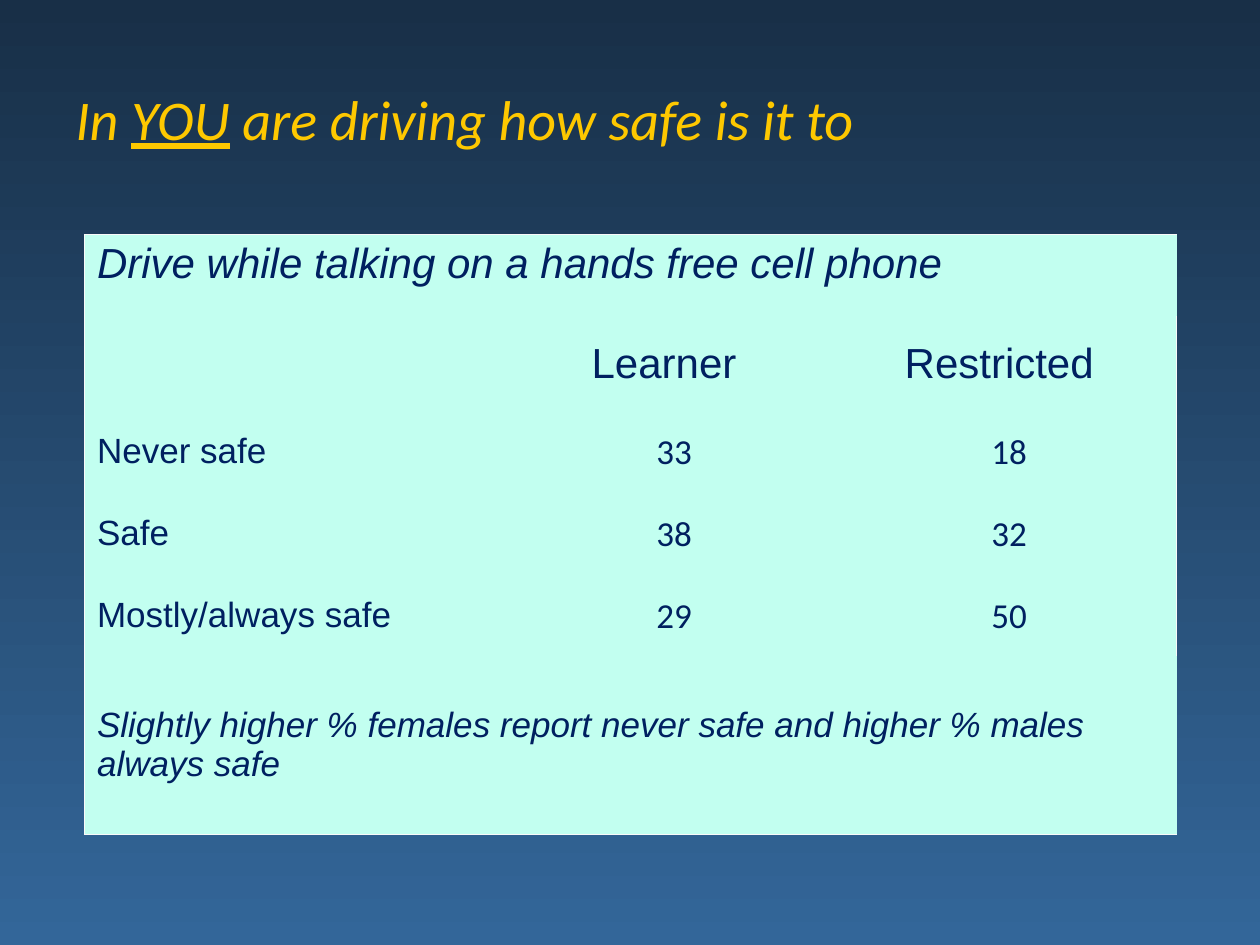
from lxml.etree import SubElement
from pptx import Presentation
from pptx.dml.color import RGBColor
from pptx.enum.text import MSO_ANCHOR, PP_ALIGN
from pptx.oxml.ns import qn
from pptx.util import Inches, Pt

COLOURS = {
    "sky top": "182F47",
    "sky bottom": "336699",
    "title": "FEC800",
    "text": "002060",
    "cell": "C2FFF0",
    "border": "F9F9F9",
}
PLAIN_TABLE_STYLE = "{2D5ABB26-0587-4C30-8999-92F81FD0307C}"
BORDER_TAGS = {"left": "a:lnL", "right": "a:lnR", "top": "a:lnT", "bottom": "a:lnB"}

TITLE = [("In ", False), ("YOU", True), (" are driving how safe is it to", False)]
QUESTION = "Drive while talking on a hands free cell phone"
GROUPS = ["Learner", "Restricted"]
ANSWERS = [
    ("Never safe", 33, 18),
    ("Safe", 38, 32),
    ("Mostly/always safe", 29, 50),
]
REMARK = "Slightly higher % females report never safe and higher % males always safe"


class SlideBuilder:
    def __init__(self, deck):
        self.deck = deck
        self.page = deck.slides.add_slide(deck.slide_layouts[5])

    def place(self, left, top, width, height):
        """Turn shares of the slide's size into lengths."""
        across, down = self.deck.slide_width, self.deck.slide_height
        return [int(share * size) for share, size in
                zip((left, top, width, height), (across, down, across, down))]

    def colour(self, name):
        return RGBColor.from_string(COLOURS[name])

    def style(self, span, size, font, colour, italic=False):
        span.font.size = Pt(size)
        span.font.name = font
        span.font.italic = italic
        span.font.color.rgb = self.colour(colour)

    def background(self, *names):
        fill = self.page.background.fill
        fill.gradient()
        fill.gradient_angle = 270
        for stop, name in zip(fill.gradient_stops, names):
            stop.color.rgb = self.colour(name)

    def title(self, parts, *shares):
        box = self.page.shapes.title
        box.left, box.top, box.width, box.height = self.place(*shares)
        box.text_frame.vertical_anchor = MSO_ANCHOR.MIDDLE
        para = box.text_frame.paragraphs[0]
        para.alignment = PP_ALIGN.LEFT
        for words, underlined in parts:
            span = para.add_run()
            span.text = words
            self.style(span, 32, "Calibri", "title", italic=True)
            span.font.underline = underlined

    def table(self, columns, rows, *shares):
        frame = self.page.shapes.add_table(len(rows), len(columns), *self.place(*shares))
        table = frame.table
        table.first_row = table.horz_banding = False
        table._tbl.tblPr.find(qn("a:tableStyleId")).text = PLAIN_TABLE_STYLE
        for column, width in zip(table.columns, columns):
            column.width = Inches(width)
        for row, height in zip(table.rows, rows):
            row.height = Inches(height)
        last_row, last_column = len(rows) - 1, len(columns) - 1
        for r in range(len(rows)):
            for c in range(len(columns)):
                edges = {"left": c == 0, "right": c == last_column,
                         "top": r == 0, "bottom": r == last_row}
                self.borders(table.cell(r, c), [side for side in edges if edges[side]])
        return table

    def borders(self, cell, sides):
        properties = cell._tc.get_or_add_tcPr()
        for side in sides:
            line = SubElement(properties, qn(BORDER_TAGS[side]), w=str(Pt(0.75)))
            paint = SubElement(line, qn("a:solidFill"))
            SubElement(paint, qn("a:srgbClr"), val=COLOURS["border"])
        cell.fill.solid()
        cell.fill.fore_color.rgb = self.colour("cell")

    def cell_text(self, cell, words, size=20, font="Arial", italic=False,
                  anchor=MSO_ANCHOR.MIDDLE):
        cell.vertical_anchor = anchor
        cell.text_frame.text = words
        self.style(cell.text_frame.paragraphs[0].runs[0], size, font, "text", italic)

    def centred_text(self, cell, words, size=20, font="Calibri", right=0.01):
        self.cell_text(cell, words, size, font)
        cell.margin_left = cell.margin_top = Inches(0.01)
        cell.margin_right, cell.margin_bottom = Inches(right), 0
        cell.text_frame.paragraphs[0].alignment = PP_ALIGN.CENTER


def main():
    deck = Presentation()
    deck.slide_width, deck.slide_height = Inches(10), Inches(7.5)
    slide = SlideBuilder(deck)

    # Background and title
    slide.background("sky top", "sky bottom")
    slide.title(TITLE, 0.05, 0.04, 0.9, 0.17)

    # Table with the question on top and the remark below
    heights = [0.65, 0.75] + [0.65] * len(ANSWERS) + [1.41]
    table = slide.table([3.35, 2.66, 2.66], heights, 0.067, 0.248, 0.866, 0.635)
    for row, words, size, anchor in [
        (0, QUESTION, 24, MSO_ANCHOR.TOP),
        (len(heights) - 1, REMARK, 20, MSO_ANCHOR.MIDDLE),
    ]:
        table.cell(row, 0).merge(table.cell(row, 2))
        slide.cell_text(table.cell(row, 0), words, size, italic=True, anchor=anchor)

    # Group headings
    for column, group in enumerate(GROUPS, start=1):
        slide.centred_text(table.cell(1, column), group, 24, "Arial", right=0.17)

    # Answers in per cent
    for row, (answer, *values) in enumerate(ANSWERS, start=2):
        slide.cell_text(table.cell(row, 0), answer)
        for column, value in enumerate(values, start=1):
            slide.centred_text(table.cell(row, column), str(value))

    deck.save("out.pptx")


if __name__ == "__main__":
    main()
